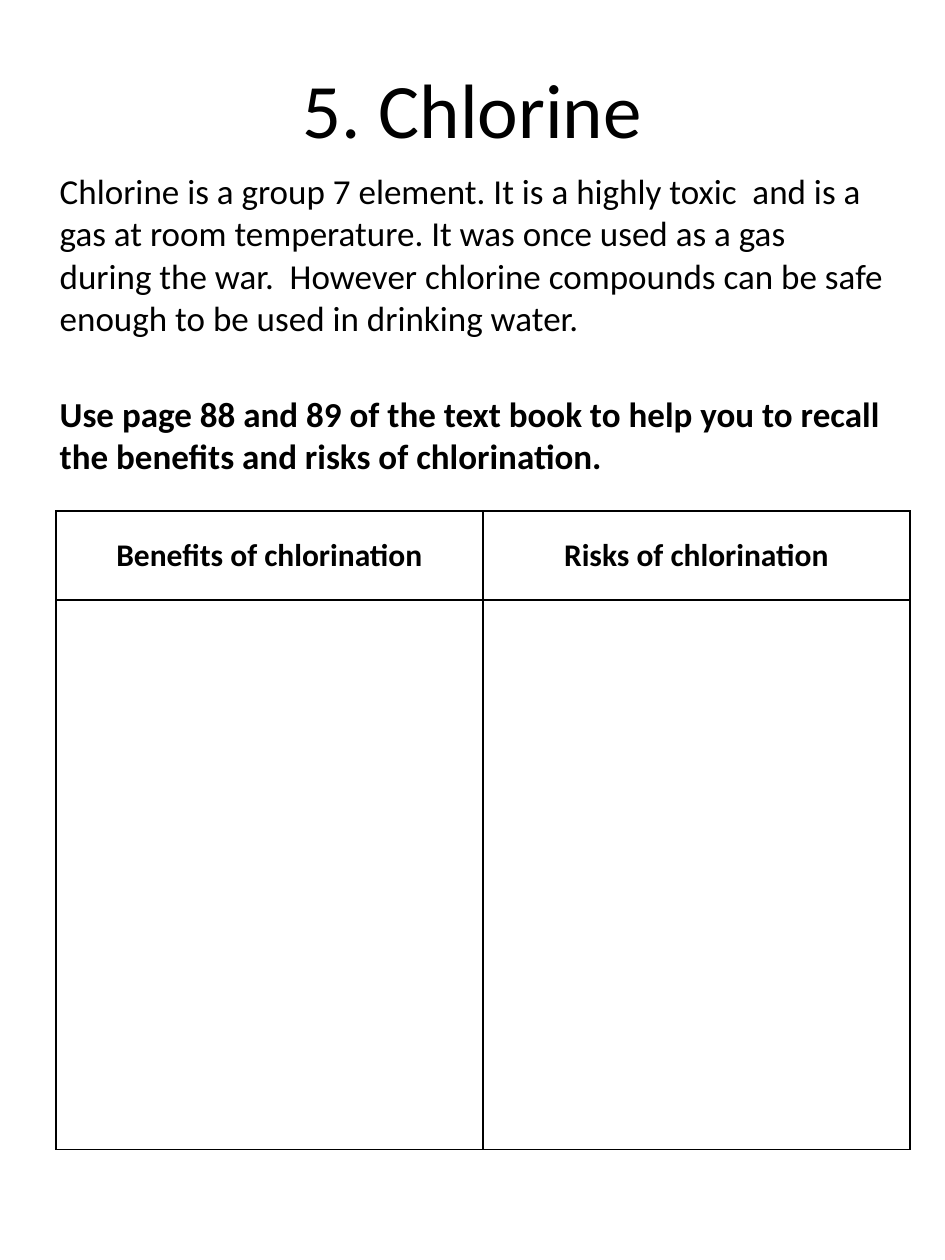
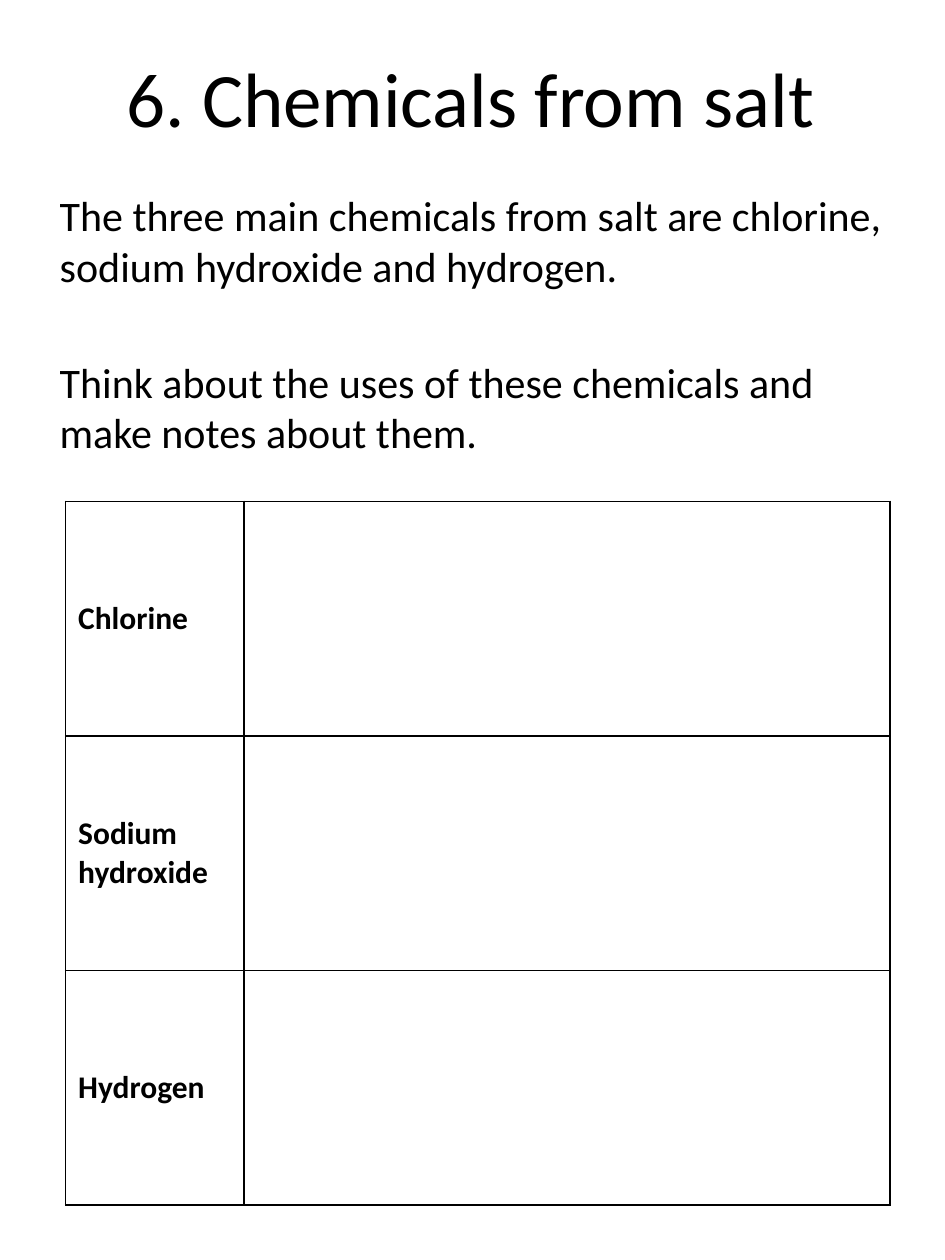
from pptx import Presentation
from pptx.dml.color import RGBColor
from pptx.enum.text import MSO_ANCHOR, PP_ALIGN
from pptx.oxml.ns import qn
from pptx.util import Pt
from lxml import etree

LEFT, CENTER = PP_ALIGN.LEFT, PP_ALIGN.CENTER
TOP, MIDDLE = MSO_ANCHOR.TOP, MSO_ANCHOR.MIDDLE

COLORS = {"text": "000000", "border": "000000", "background": "FFFFFF"}


class Worksheet:
    """Holds the shared style and the slide being built."""

    font = "Calibri"
    title_size = 44
    table_size = 18
    border_width = 1
    text_width = 486
    paragraph_gap = 1.56  # space between paragraphs, in font sizes

    def __init__(self, prs):
        self.prs = prs
        self.s = None

    def new_slide(self):
        self.s = self.prs.slides.add_slide(self.prs.slide_layouts[6])
        fill = self.s.background.fill
        fill.solid()
        fill.fore_color.rgb = RGBColor.from_string(COLORS["background"])

    def style(self, p, size, bold=False, align=LEFT):
        p.alignment = align
        p.font.name = self.font
        p.font.size = Pt(size)
        p.font.bold = bold
        p.font.color.rgb = RGBColor.from_string(COLORS["text"])

    def text_box(self, x, y, h, anchor):
        sp = self.s.shapes.add_textbox(Pt(x), Pt(y), Pt(self.text_width), Pt(h))
        tf = sp.text_frame
        tf.word_wrap = True
        tf.vertical_anchor = anchor
        return tf

    def title(self, text, x, y, h):
        p = self.text_box(x, y, h, MIDDLE).paragraphs[0]
        p.text = text
        self.style(p, self.title_size, align=CENTER)

    def body(self, paragraphs, x, y, h, size):
        """Each paragraph is a (text, bold) pair."""
        tf = self.text_box(x, y, h, TOP)
        for i, (text, bold) in enumerate(paragraphs):
            p = tf.add_paragraph() if i else tf.paragraphs[0]
            p.text = text
            self.style(p, size, bold)
            if i:
                p.space_before = Pt(size * self.paragraph_gap)

    def table(self, cells, x, y, widths, heights, align=LEFT):
        frame = self.s.shapes.add_table(len(heights), len(widths), Pt(x), Pt(y),
                                        Pt(sum(widths)), Pt(sum(heights)))
        table = frame.table
        table.first_row = table.horz_banding = False
        for column, width in zip(table.columns, widths):
            column.width = Pt(width)
        for row, height, texts in zip(table.rows, heights, cells):
            row.height = Pt(height)
            for cell, text in zip(row.cells, texts):
                cell.text = text
                cell.vertical_anchor = MIDDLE
                self.style(cell.text_frame.paragraphs[0], self.table_size, True, align)
                self.borders(cell)
                cell.fill.background()

    def borders(self, cell):
        tc_pr = cell._tc.get_or_add_tcPr()
        for side in ("a:lnL", "a:lnR", "a:lnT", "a:lnB"):
            ln = etree.SubElement(tc_pr, qn(side), w=str(Pt(self.border_width)))
            fill = etree.SubElement(ln, qn("a:solidFill"))
            etree.SubElement(fill, qn("a:srgbClr"), val=COLORS["border"])


def main():
    prs = Presentation()
    prs.slide_width, prs.slide_height = Pt(540), Pt(720)
    sheet = Worksheet(prs)

    # Chlorine
    sheet.new_slide()
    sheet.title("5. Chlorine", 27, 29, 65)
    sheet.body([
        ("Chlorine is a group 7 element. It is a highly toxic  and is a gas at room "
         "temperature. It was once used as a gas during the war.  However chlorine "
         "compounds can be safe enough to be used in drinking water.", False),
        ("Use page 88 and 89 of the text book to help you to recall the benefits "
         "and risks of chlorination.", True),
    ], 27, 93.6, 549, 20)
    sheet.table([["Benefits of chlorination", "Risks of chlorination"], ["", ""]],
                32, 292, [244, 244], [51, 314], CENTER)

    # Chemicals from salt
    sheet.new_slide()
    sheet.title("6. Chemicals from salt", 26, 20, 71)
    sheet.body([
        ("The three main chemicals from salt are chlorine, sodium hydroxide and "
         "hydrogen.", False),
        ("Think about the uses of these chemicals and make notes about them.", False),
    ], 27, 105, 539, 24)
    chemicals = ["Chlorine", "Sodium hydroxide", "Hydrogen"]
    sheet.table([[name, ""] for name in chemicals],
                37.5, 286.5, [102, 369], [134] * len(chemicals))

    prs.save("out.pptx")


if __name__ == "__main__":
    main()
